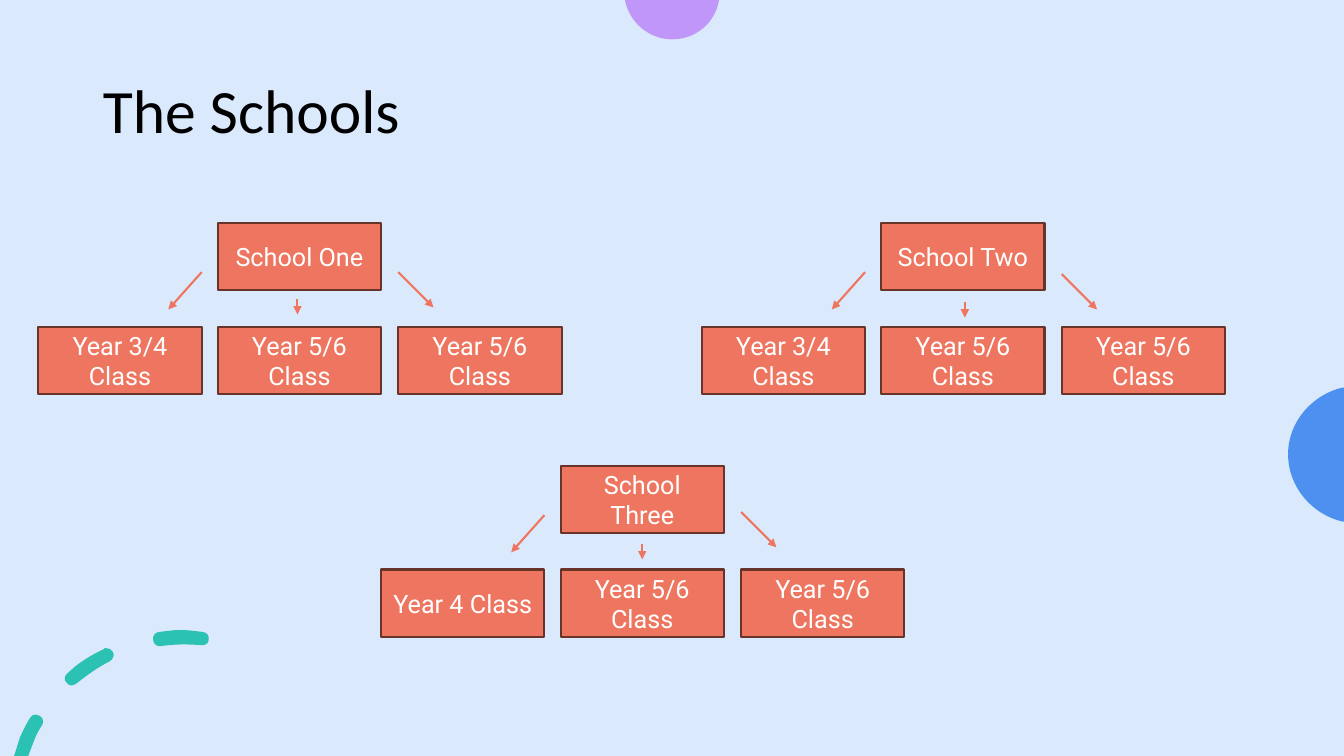
from pptx import Presentation
from pptx.dml.color import RGBColor as RGB
from pptx.enum.shapes import MSO_CONNECTOR as CONNECTOR, MSO_SHAPE as SHAPE
from pptx.enum.text import MSO_ANCHOR as ANCHOR, PP_ALIGN as ALIGN
from pptx.oxml.ns import qn
from pptx.util import Pt
from lxml.etree import SubElement

PX = 9144  # EMU per px, 100 px to the inch
THEME = {
    "background": RGB.from_string("DBE9FC"),
    "purple": RGB.from_string("C097F8"),
    "teal": RGB.from_string("2BC2B4"),
    "blue": RGB.from_string("4D90EF"),
    "coral": RGB.from_string("EE7660"),
    "border": RGB.from_string("68342A"),
    "title": RGB.from_string("000000"),
    "label": RGB.from_string("FFFFFF"),
    "title_font": "Calibri", "title_size": Pt(44),
    "label_font": "Roboto", "label_size": Pt(18),
    "stroke": Pt(1.5),
}


def add_outline(contours):
    """Draw closed contours of line ends (x, y) and cubic curves (6 numbers)."""
    builder = slide.shapes.build_freeform(*contours[0][0], scale=PX)
    for index, (start, *segments) in enumerate(contours):
        if index:
            builder.move_to(*start)
        points = [segment[i:i + 2] for segment in segments
                  for i in range(0, len(segment), 2)]
        builder.add_line_segments(points, close=False)
        builder.add_line_segments([], close=True)
    outline = builder.convert_to_shape()
    # Join each three points of a curve into one cubic segment
    lines = iter(list(outline._element.iter(qn("a:lnTo"))))
    for contour in contours:
        for segment in contour[1:]:
            first = next(lines)
            if len(segment) == 6:
                curve = first.makeelement(qn("a:cubicBezTo"))
                first.addprevious(curve)
                for line in (first, next(lines), next(lines)):
                    curve.append(line[0])
                    line.getparent().remove(line)
    return outline


def add_arrow(x1, y1, x2, y2):
    arrow = slide.shapes.add_connector(
        CONNECTOR.STRAIGHT, x1 * PX, y1 * PX, x2 * PX, y2 * PX)
    arrow.line.color.rgb = THEME["coral"]
    arrow.line.width = THEME["stroke"]
    SubElement(arrow.line._get_or_add_ln(), qn("a:tailEnd"), type="triangle")
    SubElement(arrow._element.spPr, qn("a:effectLst"))


prs = Presentation()
prs.slide_width, prs.slide_height = 1333 * PX, 750 * PX
slide = prs.slides.add_slide(prs.slide_layouts[5])
slide.background.fill.solid()
slide.background.fill.fore_color.rgb = THEME["background"]

# Edge decorations: colour, rotation and closed contours
decorations = [
    ("purple", 0, [[(620, 0), (713, 0), (713, 1), (709, 23, 690, 39, 667, 39),
                    (644, 39, 625, 23, 620, 1)]]),
    ("teal", 0, [
        [(36, 709), (34, 708, 31, 710, 30, 712), (26, 718, 23, 725, 20, 731),
         (14, 750), (28, 750), (33, 737), (35, 731, 38, 725, 42, 719),
         (44, 716, 42, 711, 39, 710), (38, 709, 37, 709, 36, 709)],
        [(105, 643), (104, 643, 103, 643, 103, 644), (90, 650, 77, 658, 67, 668),
         (64, 670, 63, 675, 66, 677), (67, 679, 69, 680, 71, 680), (71, 680),
         (73, 680, 74, 679, 76, 678), (86, 670, 97, 662, 109, 656),
         (112, 654, 114, 650, 112, 647), (111, 644, 108, 643, 105, 643)],
        [(179, 625), (172, 625, 165, 626, 158, 627), (154, 627, 151, 631, 152, 635),
         (152, 638, 155, 641, 158, 641), (159, 641, 159, 641, 159, 641),
         (173, 639, 186, 639, 199, 640), (203, 641, 207, 638, 207, 635),
         (208, 631, 205, 627, 201, 627), (201, 627, 201, 627, 201, 627),
         (194, 626, 186, 625, 179, 625)],
    ]),
    ("blue", 90, [[(1239, 423), (1372, 423), (1372, 425),
                   (1365, 455, 1338, 479, 1305, 479),
                   (1273, 479, 1246, 455, 1239, 425)]]),
]
for colour, rotation, contours in decorations:
    decoration = add_outline(contours)
    decoration.rotation = rotation
    decoration.shadow.inherit = False
    decoration.fill.solid()
    decoration.fill.fore_color.rgb = THEME[colour]
    decoration.line.fill.background()

# Title
title = slide.shapes.title
title.left, title.top, title.width, title.height = 92 * PX, 40 * PX, 1150 * PX, 145 * PX
title.text_frame.text = "The Schools"
title.text_frame.vertical_anchor = ANCHOR.MIDDLE
heading = title.text_frame.paragraphs[0]
heading.alignment = ALIGN.LEFT
heading.line_spacing = 0.9
heading_font = heading.runs[0].font
heading_font.name, heading_font.size = THEME["title_font"], THEME["title_size"]
heading_font.color.rgb = THEME["title"]

# School trees: left, top, school, first class, middle arrow offset, right arrow drop
BOX_W, BOX_H = 162, 67
CLASS_DROP = 103
TWO_COLUMNS = 357
schools = [
    (38, 221, "School One", "Year 3/4 Class", (257, 76), 49),
    (696, 221, "School Two", "Year 3/4 Class", (261, 79), 51),
    (378, 462, "School Three", "Year 4 Class", (259, 78), 46),
]
for left, top, school, first_class, (middle_x, middle_y), right_y in schools:
    # Boxes: label, column, drop below the school
    boxes = [
        (school, 1, 0),
        (first_class, 0, CLASS_DROP),
        ("Year 5/6 Class", 2, CLASS_DROP),
        ("Year 5/6 Class", 1, CLASS_DROP),
    ]
    for label, column, drop in boxes:
        box = slide.shapes.add_shape(
            SHAPE.RECTANGLE, (left + column * TWO_COLUMNS // 2) * PX,
            (top + drop) * PX, BOX_W * PX, BOX_H * PX)
        box.shadow.inherit = False
        box.fill.solid()
        box.fill.fore_color.rgb = THEME["coral"]
        box.line.color.rgb = THEME["border"]
        box.line.width = THEME["stroke"]
        box.text_frame.text = label
        box.text_frame.word_wrap = True
        box.text_frame.vertical_anchor = ANCHOR.MIDDLE
        caption = box.text_frame.paragraphs[0]
        caption.alignment = ALIGN.CENTER
        caption_font = caption.runs[0].font
        caption_font.name, caption_font.size = THEME["label_font"], THEME["label_size"]
        caption_font.color.rgb = THEME["label"]

    # Arrows from the school to its classes
    add_arrow(left + middle_x, top + middle_y, left + middle_x, top + middle_y + 15)
    add_arrow(left + BOX_W, top + 49, left + BOX_W - 33, top + 86)
    add_arrow(left + TWO_COLUMNS, top + right_y, left + TWO_COLUMNS + 35, top + right_y + 35)

prs.save("out.pptx")
